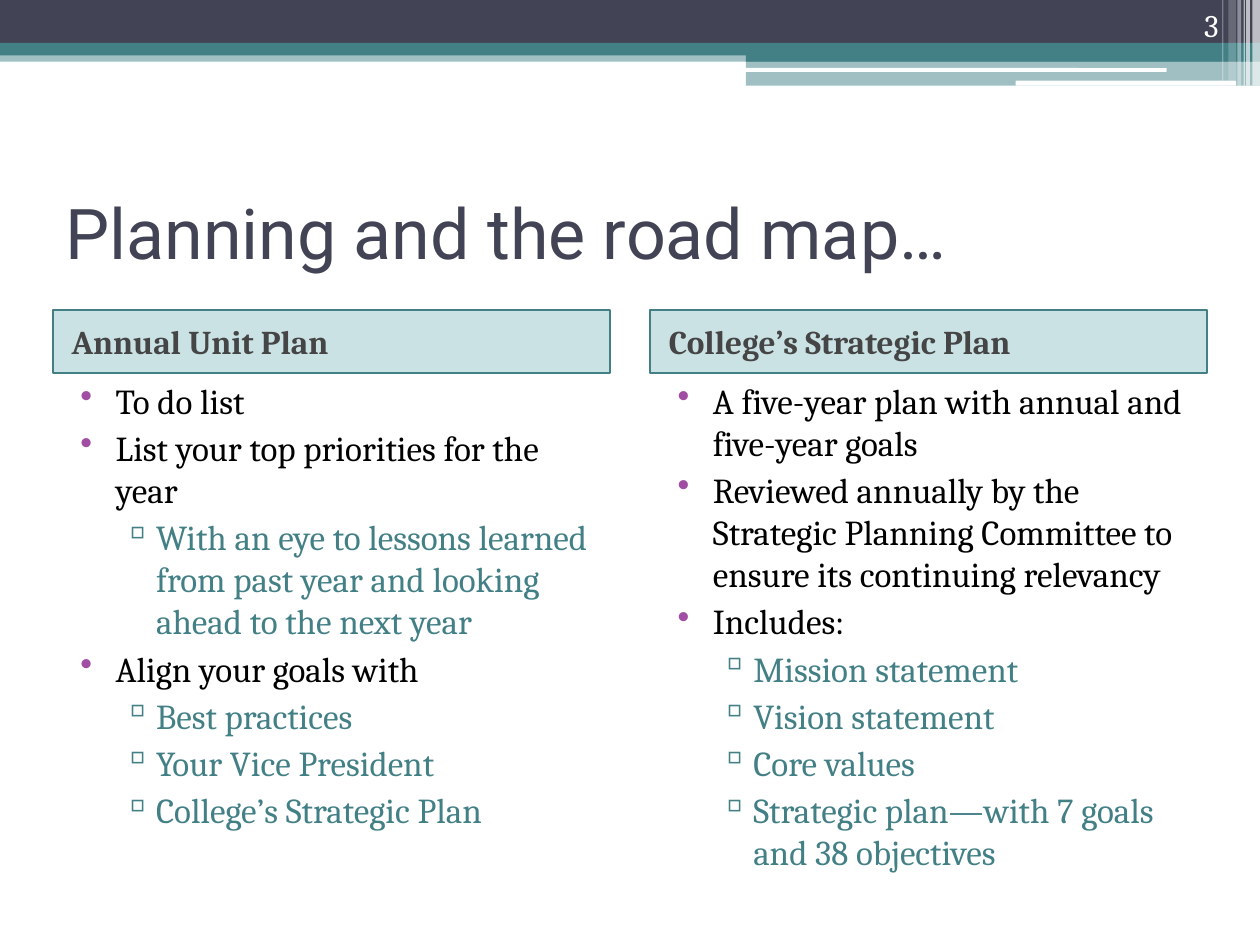
"""Build the slide comparing the annual unit plan with the strategic plan."""
from lxml import etree
from pptx import Presentation
from pptx import util as u
from pptx.dml import color
from pptx.enum import shapes, text
from pptx.oxml import ns

NAVY, TEAL, PURPLE, WHITE = "424456", "438086", "A04DA3", "FFFFFF"


def paint(fill, hex_code, alpha=100):
    """Fill a shape, line or font with a colour of the given opacity."""
    fill.solid()
    fill.fore_color.rgb = color.RGBColor.from_string(hex_code)
    if alpha < 100:
        tone = fill._xPr.find(ns.qn("a:solidFill"))[0]
        etree.SubElement(tone, ns.qn("a:alpha"), val=str(alpha * 1000))


def write(paragraph, words, size, hex_code, font="Cambria", bold=False):
    """Put words in a paragraph and format them."""
    paragraph.text = words
    run_font = paragraph.runs[0].font
    run_font.name, run_font.size, run_font.bold = font, u.Pt(size), bold
    paint(run_font.fill, hex_code)


deck = Presentation()
deck.slide_width, deck.slide_height = u.Inches(10), u.Inches(7.5)
slide = deck.slides.add_slide(deck.slide_layouts[6])
RECT, ROUND = shapes.MSO_SHAPE.RECTANGLE, shapes.MSO_SHAPE.ROUNDED_RECTANGLE

banner = [
    (RECT, 0, 0.4, 10, 0.09, TEAL, 50),
    (RECT, 0, 0, 10, 0.34, NAVY, 100),
    (RECT, 0, 0.34, 10, 0.1, TEAL, 100),
    (RECT, 5.92, 0.39, 4.08, 0.1, TEAL, 100),
    (RECT, 5.92, 0.48, 4.08, 0.2, TEAL, 50),
    (ROUND, 5.91, 0.54, 3.35, 0.03, WHITE, 100),
    (ROUND, 8.06, 0.64, 1.75, 0.04, WHITE, 100),
]
stripes = [
    (9.94, 0.06, 0.68, 65), (9.89, 0.03, 0.68, 65), (9.87, 0.01, 0.68, 60),
    (9.82, 0.03, 0.68, 40), (9.75, 0.06, 0.64, 20), (9.7, 0.01, 0.64, 30),
]
banner += [(RECT, left, 0, width, height, WHITE, alpha)
           for left, width, height, alpha in stripes]
for preset, left, top, width, height, hex_code, alpha in banner:
    band = slide.shapes.add_shape(preset, *map(u.Inches, (left, top, width, height)))
    band.shadow.inherit = False
    band.line.fill.background()
    paint(band.fill, hex_code, alpha)

MARGIN, COLUMN, PITCH = 0.42, 4.42, 4.74
HEADER_TOP, HEADER_HEIGHT, LIST_HEIGHT = 2.46, 0.5, 4.25

title = slide.shapes.add_textbox(*map(u.Inches, (MARGIN, 1.25, 9.17, 1.17))).text_frame
title.word_wrap = True
title.vertical_anchor = text.MSO_ANCHOR.MIDDLE
write(title.paragraphs[0], "Planning and the road map…", 40, NAVY, "Roboto")

plans = {
    "Annual Unit Plan": [
        (0, "To do list"),
        (0, "List your top priorities for the year"),
        (1, "With an eye to lessons learned from past year and looking ahead to the next year"),
        (0, "Align your goals with"),
        (1, "Best practices"),
        (1, "Your Vice President"),
        (1, "College’s Strategic Plan"),
    ],
    "College’s Strategic Plan": [
        (0, "A five-year plan with annual and five-year goals"),
        (0, "Reviewed annually by the Strategic Planning Committee to ensure its continuing relevancy"),
        (0, "Includes:"),
        (1, "Mission statement"),
        (1, "Vision statement"),
        (1, "Core values"),
        (1, "Strategic plan—with 7 goals and 38 objectives"),
    ],
}
levels = [(0.4, -0.28, "•", PURPLE, "000000"), (0.72, -0.27, "▫", TEAL, TEAL)]

for column, (heading, points) in enumerate(plans.items()):
    left = MARGIN + column * PITCH
    header = slide.shapes.add_shape(
        RECT, *map(u.Inches, (left, HEADER_TOP, COLUMN, HEADER_HEIGHT)))
    header.shadow.inherit = False
    paint(header.fill, "328E97", 25)
    paint(header.line.fill, TEAL)
    header.line.width = u.Pt(1)
    header.text_frame.vertical_anchor = text.MSO_ANCHOR.MIDDLE
    label = header.text_frame.paragraphs[0]
    write(label, heading, 19, "454545", bold=True)
    label.alignment = text.PP_ALIGN.LEFT
    label.space_before = u.Pt(3)
    label._p.get_or_add_pPr().set("marL", str(u.Inches(0.05)))

    body = slide.shapes.add_textbox(*map(
        u.Inches, (left, HEADER_TOP + HEADER_HEIGHT, COLUMN, LIST_HEIGHT))).text_frame
    body.word_wrap = True
    for row, (level, point) in enumerate(points):
        indent, hanging, mark, mark_color, ink = levels[level]
        item = body.add_paragraph() if row else body.paragraphs[0]
        write(item, point, 20, ink)
        item.level = level
        item.space_before = u.Pt(3)
        props = item._p.get_or_add_pPr()
        props.set("marL", str(u.Inches(indent)))
        props.set("indent", str(u.Inches(hanging)))
        tint = etree.SubElement(props, ns.qn("a:buClr"))
        etree.SubElement(tint, ns.qn("a:srgbClr"), val=mark_color)
        etree.SubElement(props, ns.qn("a:buChar"), char=mark)

number = slide.shapes.add_textbox(*map(u.Inches, (8.94, 0, 0.83, 0.4))).text_frame
number.word_wrap = True
number.vertical_anchor = text.MSO_ANCHOR.BOTTOM
write(number.paragraphs[0], "3", 18, WHITE)
number.paragraphs[0].alignment = text.PP_ALIGN.RIGHT

deck.save("out.pptx")
